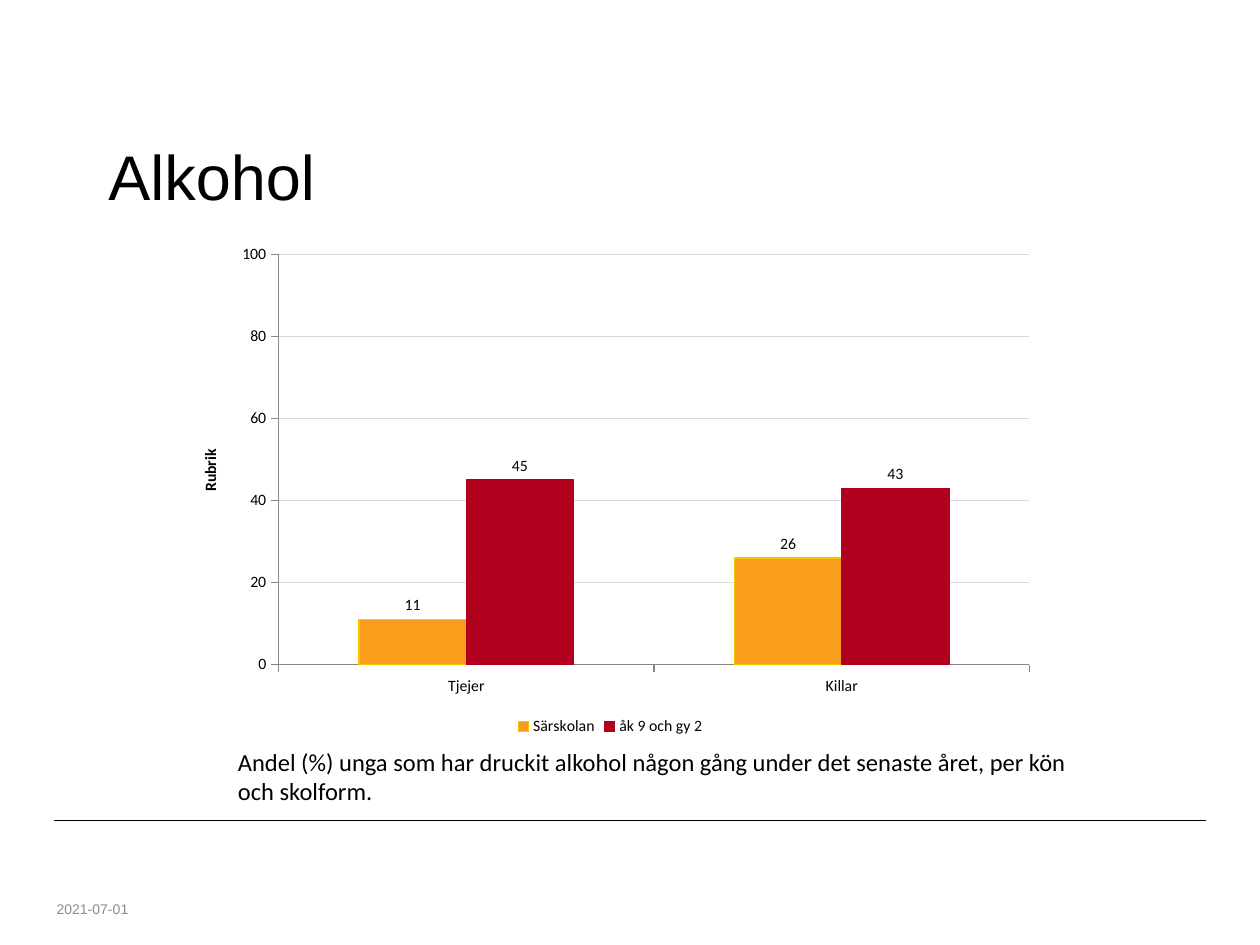
"""Build a slide that compares alcohol use by gender and school form."""
from lxml.etree import SubElement
from pptx import Presentation
from pptx.chart.data import CategoryChartData
from pptx.dml.color import RGBColor
from pptx.enum.chart import XL_CHART_TYPE, XL_LABEL_POSITION, XL_LEGEND_POSITION, XL_TICK_MARK
from pptx.enum.shapes import MSO_CONNECTOR
from pptx.enum.text import MSO_ANCHOR, PP_ALIGN
from pptx.oxml import parse_xml
from pptx.oxml.ns import nsdecls, qn
from pptx.util import Inches, Pt

theme = {
    "ink": "000000", "date": "8C8C8C", "grid": "D9D9D9", "axis": "868686",
    "head": {"name": "Arial", "size": Pt(36), "bold": False},
    "small": {"name": "Arial", "size": Pt(8)},
    "chart": {"name": "Calibri", "size": Pt(9)},
    "label": {"name": "Calibri", "size": Pt(9), "bold": True},
    "note": {"name": "Calibri", "size": Pt(14)},
}


def style(font, kind, color=theme["ink"]):
    for key, value in theme[kind].items():
        setattr(font, key, value)
    font.color.rgb = RGBColor.from_string(color)


def stroke(line, color, width=0.75):
    line.color.rgb = RGBColor.from_string(color)
    line.width = Pt(width)


deck = Presentation()
deck.slide_width, deck.slide_height = Inches(10), Inches(7.5)
slide = deck.slides.add_slide(deck.slide_layouts[5])
shapes = slide.shapes

rule = shapes.add_connector(
    MSO_CONNECTOR.STRAIGHT, Inches(0.43), Inches(6.51), Inches(9.57), Inches(6.51))
stroke(rule.line, theme["ink"], 0.5)
SubElement(rule.element.spPr, qn("a:effectLst"))

title = shapes.title
date = shapes.add_textbox(Inches(0.35), Inches(7.09), Inches(0.79), Inches(0.24))
note = shapes.add_textbox(Inches(1.79), Inches(5.88), Inches(6.93), Inches(0.57))
texts = [
    (title, "Alkohol", "head", theme["ink"], MSO_ANCHOR.MIDDLE, True),
    (date, "2021-07-01", "small", theme["date"], MSO_ANCHOR.MIDDLE, False),
    (note, "Andel (%) unga som har druckit alkohol någon gång under det senaste året, "
     "per kön och skolform.", "note", theme["ink"], MSO_ANCHOR.TOP, True),
]
for box, words, kind, color, anchor, wrap in texts:
    frame = box.text_frame
    frame.text = words
    frame.word_wrap, frame.vertical_anchor = wrap, anchor
    line = frame.paragraphs[0]
    line.alignment = PP_ALIGN.LEFT
    style(line.runs[0].font, kind, color)
place = {"left": 0.76, "top": 1.04, "width": 7.95, "height": 0.71}
for key, value in place.items():
    setattr(title, key, Inches(value))

bars = [
    ("Särskolan", (11, 26), "F99D1C", "FFC000"),
    ("åk 9 och gy 2", (45, 43), "B1001E", "B1001E"),
]
data = CategoryChartData(number_format="0")
data.categories = ["Tjejer", "Killar"]
for name, values, *_ in bars:
    data.add_series(name, values)
chart = shapes.add_chart(
    XL_CHART_TYPE.COLUMN_CLUSTERED, Inches(1.38), Inches(1.86),
    Inches(6.93), Inches(4.02), data).chart
style(chart.font, "chart")
chart.has_title = False
chart.has_legend = True
chart.legend.position = XL_LEGEND_POSITION.BOTTOM
chart.legend.include_in_layout = False

plot = chart.plots[0]
form = {"gap_width": 150, "overlap": 0, "vary_by_categories": False, "has_data_labels": True}
for key, value in form.items():
    setattr(plot, key, value)
labels = plot.data_labels
form = {"show_value": True, "position": XL_LABEL_POSITION.OUTSIDE_END,
        "number_format": "0", "number_format_is_linked": False}
for key, value in form.items():
    setattr(labels, key, value)
style(labels.font, "chart")
for series, (_, _, fill, edge) in zip(plot.series, bars):
    series.format.fill.solid()
    series.format.fill.fore_color.rgb = RGBColor.from_string(fill)
    stroke(series.format.line, edge)

scale = chart.value_axis
form = {"minimum_scale": 0, "maximum_scale": 100, "major_unit": 20,
        "has_major_gridlines": True}
for key, value in form.items():
    setattr(scale, key, value)
stroke(scale.major_gridlines.format.line, theme["grid"])
scale.tick_labels.number_format = "General"
scale.tick_labels.number_format_is_linked = False
for axis in (chart.category_axis, scale):
    axis.major_tick_mark = XL_TICK_MARK.OUTSIDE
    axis.minor_tick_mark = XL_TICK_MARK.NONE
    stroke(axis.format.line, theme["axis"])
    style(axis.tick_labels.font, "chart")
frame = scale.axis_title.text_frame
frame.text = "Rubrik"
style(frame.paragraphs[0].runs[0].font, "label")

area = plot._element.getparent()
for old in area.findall(qn("c:layout")):
    area.remove(old)
sizes = {"x": 0.12, "y": 0.04, "w": 0.86, "h": 0.81}
parts = "".join(f'<c:{key} val="{value}"/>' for key, value in sizes.items())
area.insert(0, parse_xml(
    f'<c:layout {nsdecls("c")}><c:manualLayout><c:layoutTarget val="inner"/>'
    f'<c:xMode val="edge"/><c:yMode val="edge"/>{parts}</c:manualLayout></c:layout>'))

deck.save("out.pptx")
